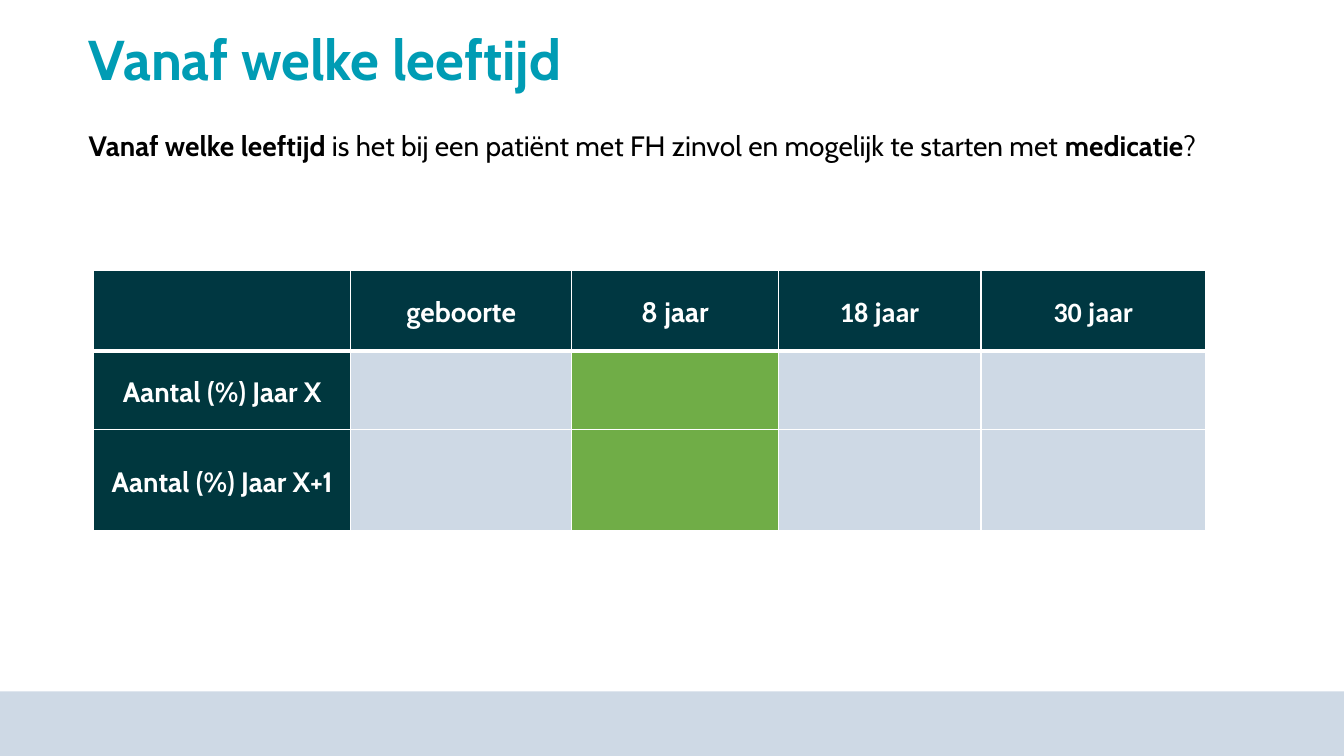
"""Build a slide that asks from which age medication makes sense."""
from dataclasses import dataclass
from typing import Any

from lxml import etree
from pptx import Presentation
from pptx import util as u
from pptx.dml import color as c
from pptx.enum import shapes, text
from pptx.oxml import ns


@dataclass(frozen=True)
class Theme:
    """Colours, fonts and type sizes."""
    teal: str = "009CB4"
    head: str = "003741"
    side: str = "00373E"
    pale: str = "CED9E5"
    green: str = "70AD47"
    white: str = "FFFFFF"
    black: str = "000000"
    font: str = "Cabin"
    alt: str = "Calibri"
    big: int = 40
    body: int = 20


@dataclass(frozen=True)
class Box:
    """A place on the slide in inches."""
    left: float
    top: float
    width: float
    height: float

    def emu(self) -> tuple[u.Length, ...]:
        """Give the four lengths."""
        return tuple(map(u.Inches, (self.left, self.top, self.width, self.height)))


@dataclass(frozen=True)
class Run:
    """A piece of text with one format."""
    words: str
    color: str
    bold: bool = True
    size: int = 20
    font: str = "Cabin"


@dataclass(frozen=True)
class Cell:
    """A table cell with its fill."""
    fill: str
    words: str = ""
    font: str = "Cabin"


T = Theme()
COLS = (2.55, 2.19, 2.05, 2.01, 2.23)
ROWS = (0.8, 0.78, 1)
TINTS = (T.pale, T.green, T.pale, T.pale)
GRID = [
    [Cell(T.head), Cell(T.head, "geboorte"), Cell(T.head, "8 jaar"),
     Cell(T.head, "18 jaar", T.alt), Cell(T.head, "30 jaar", T.alt)],
    *([Cell(T.side, f"Aantal (%) Jaar {year}"), *map(Cell, TINTS)]
      for year in ("X", "X+1")),
]
ASK = (
    Run("Vanaf welke leeftijd ", T.black),
    Run("is het bij een patiënt met FH zinvol en mogelijk te starten met ", T.black, False),
    Run("medicatie", T.black),
    Run("?", T.black, False),
)


def apply(item: Any, form: dict[str, Any]) -> None:
    """Set each format value on an object."""
    for key, val in form.items():
        setattr(item, key, val)


def paint(item: Any, tint: str) -> None:
    """Fill a shape or cell with one colour."""
    item.fill.solid()
    item.fill.fore_color.rgb = c.RGBColor.from_string(tint)


def write(para: Any, runs: tuple[Run, ...]) -> None:
    """Add formatted runs to a paragraph."""
    for part in runs:
        run = para.add_run()
        run.text = part.words
        apply(run.font, {"name": part.font, "size": u.Pt(part.size), "bold": part.bold})
        run.font.color.rgb = c.RGBColor.from_string(part.color)


def edge(cell: Any, row: int) -> None:
    """Draw white borders, thick below the header."""
    thick = {0: "B", 1: "T"}.get(row)
    props = cell._tc.get_or_add_tcPr()
    for spot, side in enumerate("LRTB"):
        line = etree.Element(ns.qn(f"a:ln{side}"), w=str(u.Pt(3 if side == thick else 1)))
        fill = etree.SubElement(line, ns.qn("a:solidFill"))
        etree.SubElement(fill, ns.qn("a:srgbClr"), val=T.white)
        props.insert(spot, line)


def add_title(slide: Any) -> None:
    """Place and format the title."""
    title = slide.shapes.title
    apply(title, dict(zip(("left", "top", "width", "height"),
                          Box(0.78, 0.26, 10.68, 0.71).emu())))
    frame = title.text_frame
    apply(frame, {"vertical_anchor": text.MSO_ANCHOR.MIDDLE, "word_wrap": True})
    para = frame.paragraphs[0]
    apply(para, {"alignment": text.PP_ALIGN.LEFT, "line_spacing": 0.9})
    write(para, (Run("Vanaf welke leeftijd", T.teal, size=T.big),))


def add_band(slide: Any) -> None:
    """Draw the band along the bottom."""
    band = slide.shapes.add_shape(shapes.MSO_SHAPE.RECTANGLE, *Box(0, 6.86, 13.33, 0.64).emu())
    band.shadow.inherit = False
    paint(band, T.pale)
    band.line.fill.background()


def add_ask(slide: Any) -> None:
    """Write the question."""
    frame = slide.shapes.add_textbox(*Box(0.78, 1.23, 11.22, 2.12).emu()).text_frame
    frame.word_wrap = True
    write(frame.paragraphs[0], ASK)


def add_grid(slide: Any) -> None:
    """Draw the table of ages and years."""
    box = Box(0.93, 2.68, sum(COLS), sum(ROWS))
    table = slide.shapes.add_table(len(ROWS), len(COLS), *box.emu()).table
    for col, width in zip(table.columns, COLS):
        col.width = u.Inches(width)
    for row, height in zip(table.rows, ROWS):
        row.height = u.Inches(height)
    form = {"vertical_anchor": text.MSO_ANCHOR.MIDDLE,
            "margin_left": u.Inches(0.07), "margin_right": u.Inches(0.07),
            "margin_top": 0, "margin_bottom": 0}
    for y, line in enumerate(GRID):
        for x, item in enumerate(line):
            cell = table.cell(y, x)
            paint(cell, item.fill)
            edge(cell, y)
            apply(cell, form)
            if item.words:
                para = cell.text_frame.paragraphs[0]
                apply(para, {"alignment": text.PP_ALIGN.CENTER, "line_spacing": 1.15})
                write(para, (Run(item.words, T.white, size=T.body, font=item.font),))


def main() -> None:
    """Build and save the slide."""
    deck = Presentation()
    apply(deck, {"slide_width": u.Inches(13.33), "slide_height": u.Inches(7.5)})
    slide = deck.slides.add_slide(deck.slide_layouts[5])
    for draw in (add_band, add_title, add_ask, add_grid):
        draw(slide)
    deck.save("out.pptx")


if __name__ == "__main__":
    main()
